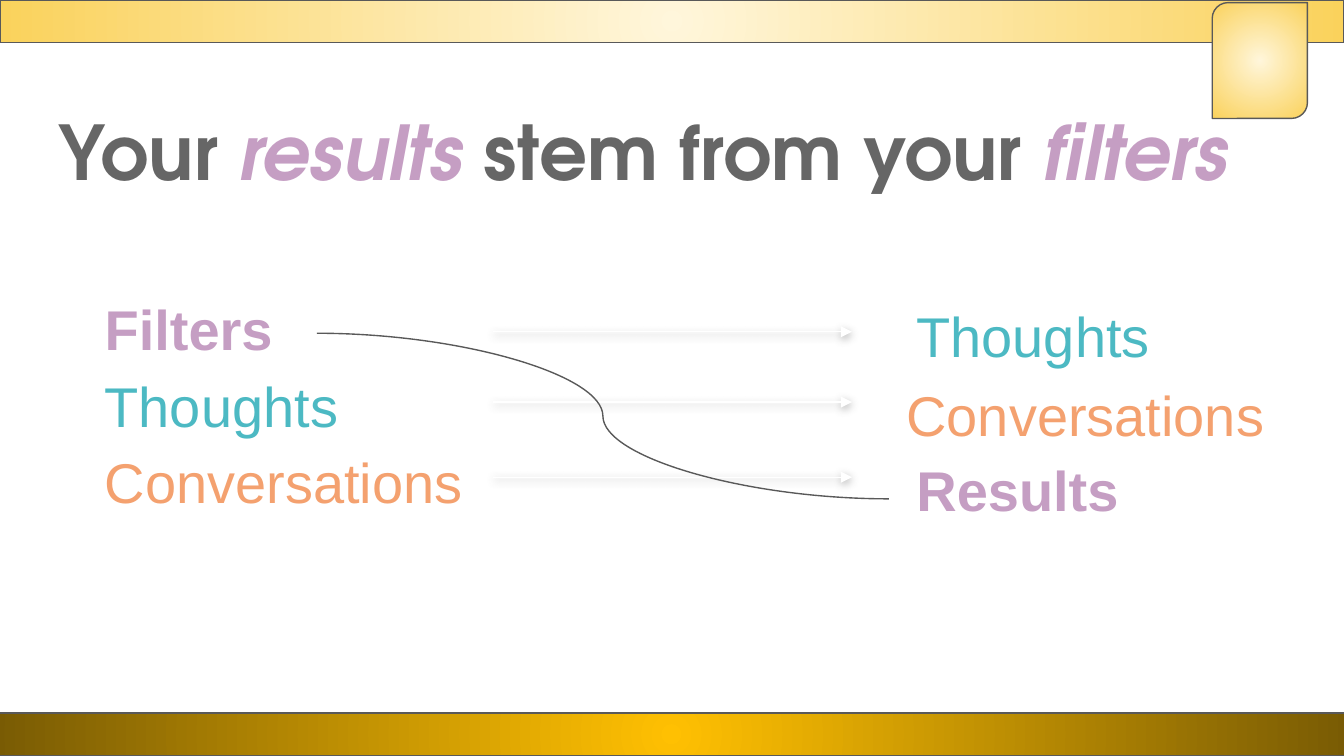
"""Build the slide that links filters to results."""
from lxml import etree
from pptx import Presentation
from pptx.dml.color import RGBColor
from pptx.enum.shapes import MSO_CONNECTOR, MSO_SHAPE
from pptx.enum.text import MSO_ANCHOR, MSO_AUTO_SIZE
from pptx.oxml import parse_xml
from pptx.oxml.ns import nsdecls, qn
from pptx.util import Cm, Pt

RECTANGLE = MSO_SHAPE.RECTANGLE
ROUNDED_DIAGONAL = MSO_SHAPE.ROUND_2_DIAG_RECTANGLE
STRAIGHT = MSO_CONNECTOR.STRAIGHT
CURVE = MSO_CONNECTOR.CURVE
TOP = MSO_ANCHOR.TOP
GROW = MSO_AUTO_SIZE.SHAPE_TO_FIT_TEXT

COLORS = {
    "cream": "FFF6DB",
    "yellow": "FAD25C",
    "amber": "FFC002",
    "brown": "795B04",
    "outline": "595959",
    "white": "FFFFFF",
    "gray": "666666",
    "purple": "C59EC3",
    "teal": "4CB9C3",
    "orange": "F4A16F",
}


def add_run(paragraph, text, font_name, size, color, bold=False, italic=False):
    run = paragraph.add_run()
    run.text = text
    run.font.name = font_name
    run.font.size = Pt(size)
    run.font.bold = bold
    run.font.italic = italic
    run.font.color.rgb = RGBColor.from_string(COLORS[color])


def add_line(kind, left, top, right, bottom, color):
    connector = slide.shapes.add_connector(kind, Cm(left), Cm(top), Cm(right), Cm(bottom))
    connector.line.width = Pt(0.75)
    connector.line.color.rgb = RGBColor.from_string(COLORS[color])
    effects = etree.SubElement(connector._element.spPr, qn("a:effectLst"))
    return connector, effects


presentation = Presentation()
presentation.slide_width = Cm(25.4)
presentation.slide_height = Cm(14.29)
slide = presentation.slides.add_slide(presentation.slide_layouts[6])

decorations = [
    (RECTANGLE, 0, 0, 25.4, 0.8, "cream", "yellow"),
    (RECTANGLE, -0.1, 13.48, 25.58, 0.8, "amber", "brown"),
    (ROUNDED_DIAGONAL, 22.91, 0.05, 1.8, 2.19, "cream", "yellow"),
]
for kind, left, top, width, height, inner, outer in decorations:
    shape = slide.shapes.add_shape(kind, Cm(left), Cm(top), Cm(width), Cm(height))
    shape.shadow.inherit = False
    shape.line.width = Pt(0.75)
    shape.line.color.rgb = RGBColor.from_string(COLORS["outline"])
    gradient = parse_xml(
        f'<a:gradFill {nsdecls("a")} rotWithShape="1"><a:gsLst>'
        f'<a:gs pos="0"><a:srgbClr val="{COLORS[inner]}"/></a:gs>'
        f'<a:gs pos="100000"><a:srgbClr val="{COLORS[outer]}"/></a:gs></a:gsLst>'
        '<a:path path="circle"><a:fillToRect l="50000" t="50000" r="50000" b="50000"/></a:path>'
        "</a:gradFill>"
    )
    shape._element.spPr.find(qn("a:prstGeom")).addnext(gradient)

for arrow_top in (6.27, 7.6, 9.02):
    arrow, effects = add_line(STRAIGHT, 9.32, arrow_top, 16.1, arrow_top, "white")
    etree.SubElement(arrow.line._get_or_add_ln(), qn("a:tailEnd"), type="triangle")
    effects.append(parse_xml(
        f'<a:outerShdw {nsdecls("a")} blurRad="{Pt(4.5)}" dist="{Pt(1.5)}" dir="5400000">'
        f'<a:srgbClr val="{COLORS["gray"]}"><a:alpha val="50000"/></a:srgbClr></a:outerShdw>'
    ))

add_line(CURVE, 5.99, 6.3, 16.8, 9.43, "outline")

labels = [
    ("Filters", 1.73, 5.44, 6.35, "purple", True),
    ("Thoughts", 1.73, 6.89, 6.35, "teal", False),
    ("Conversations", 1.73, 8.34, 7.6, "orange", False),
    ("Thoughts", 17.07, 5.57, 6.35, "teal", False),
    ("Conversations", 16.88, 7.06, 7.52, "orange", False),
    ("Results", 17.07, 8.49, 6.35, "purple", True),
]
for text, left, top, width, color, bold in labels:
    label = slide.shapes.add_textbox(Cm(left), Cm(top), Cm(width), Cm(1.54))
    label.text_frame.word_wrap = True
    label.text_frame.auto_size = GROW
    paragraph = label.text_frame.paragraphs[0]
    properties = paragraph._p.get_or_add_pPr()
    properties.set("marL", str(Cm(1.27)))
    properties.set("indent", str(Cm(-1.27)))
    add_run(paragraph, text, "Arial", 30, color, bold)

title = slide.shapes.add_textbox(Cm(0.86), Cm(1.93), Cm(23.67), Cm(1.6))
frame = title.text_frame
frame.word_wrap = True
frame.vertical_anchor = TOP
frame.margin_left = frame.margin_right = Cm(0.25)
frame.margin_top = frame.margin_bottom = Cm(0.25)
paragraph = frame.paragraphs[0]
paragraph.line_spacing = 0.9
title_runs = [
    ("Your ", "gray", False),
    ("results", "purple", True),
    (" stem from your ", "gray", False),
    ("filters", "purple", True),
]
for text, color, italic in title_runs:
    add_run(paragraph, text, "TeX Gyre Adventor", 40.4, color, True, italic)

presentation.save("out.pptx")
